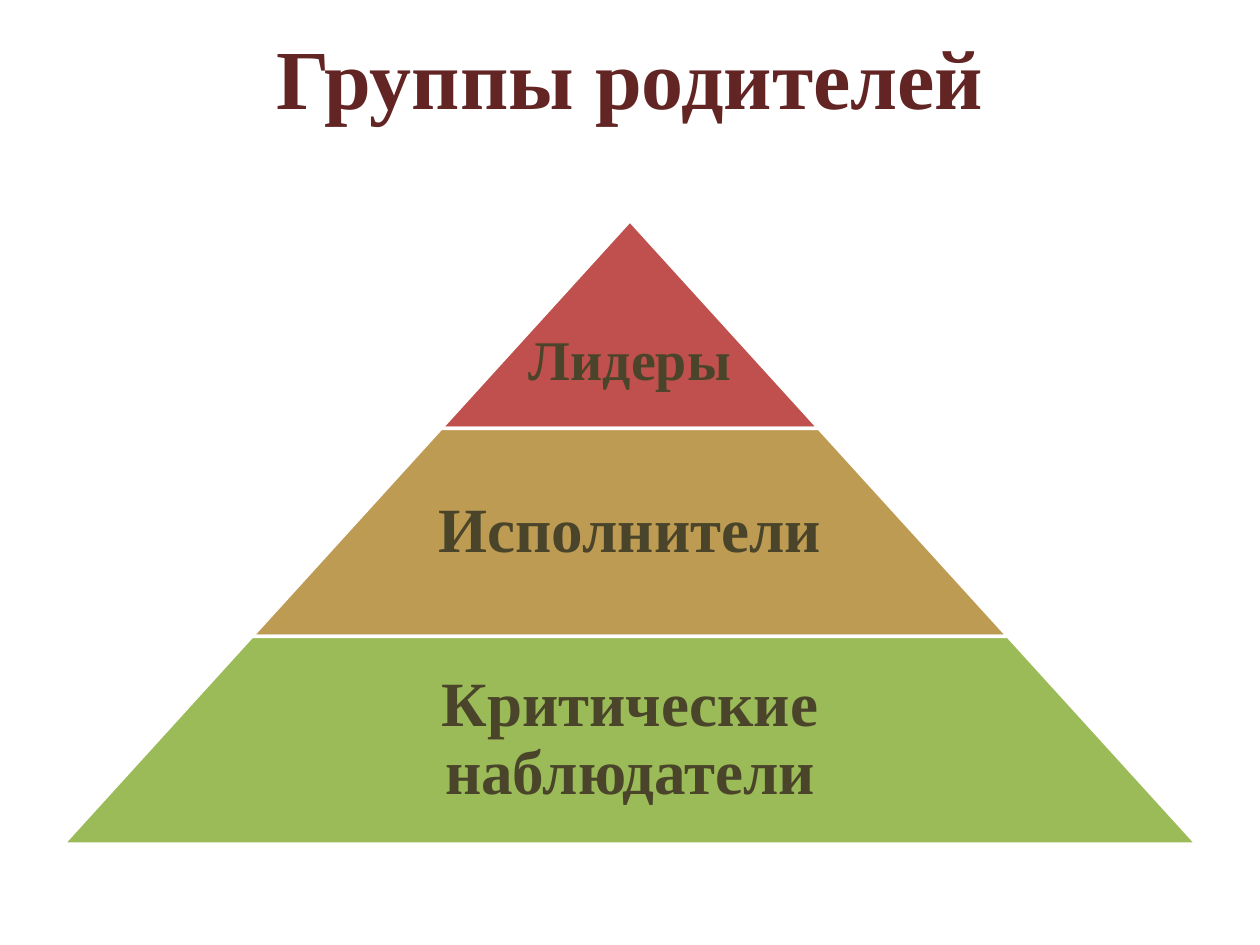
import pptx
import pptx.dml.color
import pptx.enum.shapes
import pptx.enum.text
import pptx.oxml
import pptx.oxml.ns
import pptx.util
from lxml import etree

Inches = pptx.util.Inches
Pt = pptx.util.Pt
RGBColor = pptx.dml.color.RGBColor

WHITE = RGBColor(0xFF, 0xFF, 0xFF)
MAROON = RGBColor(0x63, 0x25, 0x23)
OLIVE = RGBColor(0x4A, 0x45, 0x2A)
RED = RGBColor(0xC0, 0x50, 0x4D)
OCHRE = RGBColor(0xBD, 0x9B, 0x53)
GREEN = RGBColor(0x9B, 0xBB, 0x59)

CENTER_X = 5
PYRAMID_TOP = 1.75
TIER_HEIGHT = 1.65
TIER_STEP = 3  # each tier is this much wider than the one above

# label, fill, text size, text outline, label width / tier width, top inset
TIERS = [
    ("Лидеры", RED, 32, MAROON, 1, 0.65),
    ("Исполнители", OCHRE, 36, OLIVE, 0.65, 0.05),
    ("Критические наблюдатели", GREEN, 36, OLIVE, 0.65, 0.05),
]


class SlideBuilder:
    font_name = "Times New Roman"

    def __init__(self, presentation):
        self.slide = presentation.slides.add_slide(presentation.slide_layouts[5])

    def add_run(self, paragraph, text, size, color):
        run = paragraph.add_run()
        run.text = text
        run.font.name = self.font_name
        run.font.size = Pt(size)
        run.font.bold = True
        run.font.color.rgb = color
        return run

    def outline_run(self, run, color):
        qn = pptx.oxml.ns.qn
        line = etree.Element(qn("a:ln"), w=str(Pt(0.75)))
        fill = etree.SubElement(line, qn("a:solidFill"))
        etree.SubElement(fill, qn("a:srgbClr"), val=str(color))
        run.font._element.insert(0, line)

    def set_title(self, text):
        title = self.slide.shapes.title
        title.left, title.top = Inches(0.5), Inches(0.21)
        title.width, title.height = Inches(9), Inches(0.79)
        frame = title.text_frame
        frame.vertical_anchor = pptx.enum.text.MSO_ANCHOR.MIDDLE
        paragraph = frame.paragraphs[0]
        paragraph.alignment = pptx.enum.text.PP_ALIGN.CENTER
        self.add_run(paragraph, text, 48, MAROON)

    def add_tier(self, top, width, color):
        shape = self.slide.shapes.add_shape(
            pptx.enum.shapes.MSO_SHAPE.TRAPEZOID,
            Inches(CENTER_X - width / 2), Inches(top),
            Inches(width), Inches(TIER_HEIGHT))
        shape.adjustments[0] = TIER_STEP / 2 / TIER_HEIGHT
        shape.shadow.inherit = False
        shape.fill.solid()
        shape.fill.fore_color.rgb = color
        shape.line.color.rgb = WHITE
        shape.line.width = Pt(2)

    def add_label(self, text, top, width, size, outline, top_inset):
        box = self.slide.shapes.add_textbox(
            Inches(CENTER_X - width / 2), Inches(top),
            Inches(width), Inches(TIER_HEIGHT))
        frame = box.text_frame
        frame.word_wrap = True
        frame.vertical_anchor = pptx.enum.text.MSO_ANCHOR.MIDDLE
        frame.margin_left = frame.margin_right = frame.margin_bottom = Inches(0.05)
        frame.margin_top = Inches(top_inset)
        paragraph = frame.paragraphs[0]
        paragraph.alignment = pptx.enum.text.PP_ALIGN.CENTER
        paragraph.line_spacing = 0.9
        run = self.add_run(paragraph, text, size, OLIVE)
        self.outline_run(run, outline)


def main():
    presentation = pptx.Presentation()
    presentation.slide_width = Inches(10)
    presentation.slide_height = Inches(7.5)

    builder = SlideBuilder(presentation)
    builder.set_title("Группы родителей")
    for index, (label, color, size, outline, share, top_inset) in enumerate(TIERS):
        top = PYRAMID_TOP + index * TIER_HEIGHT
        width = TIER_STEP * (index + 1)
        builder.add_tier(top, width, color)
        builder.add_label(label, top, width * share, size, outline, top_inset)

    presentation.save("out.pptx")


if __name__ == "__main__":
    main()
